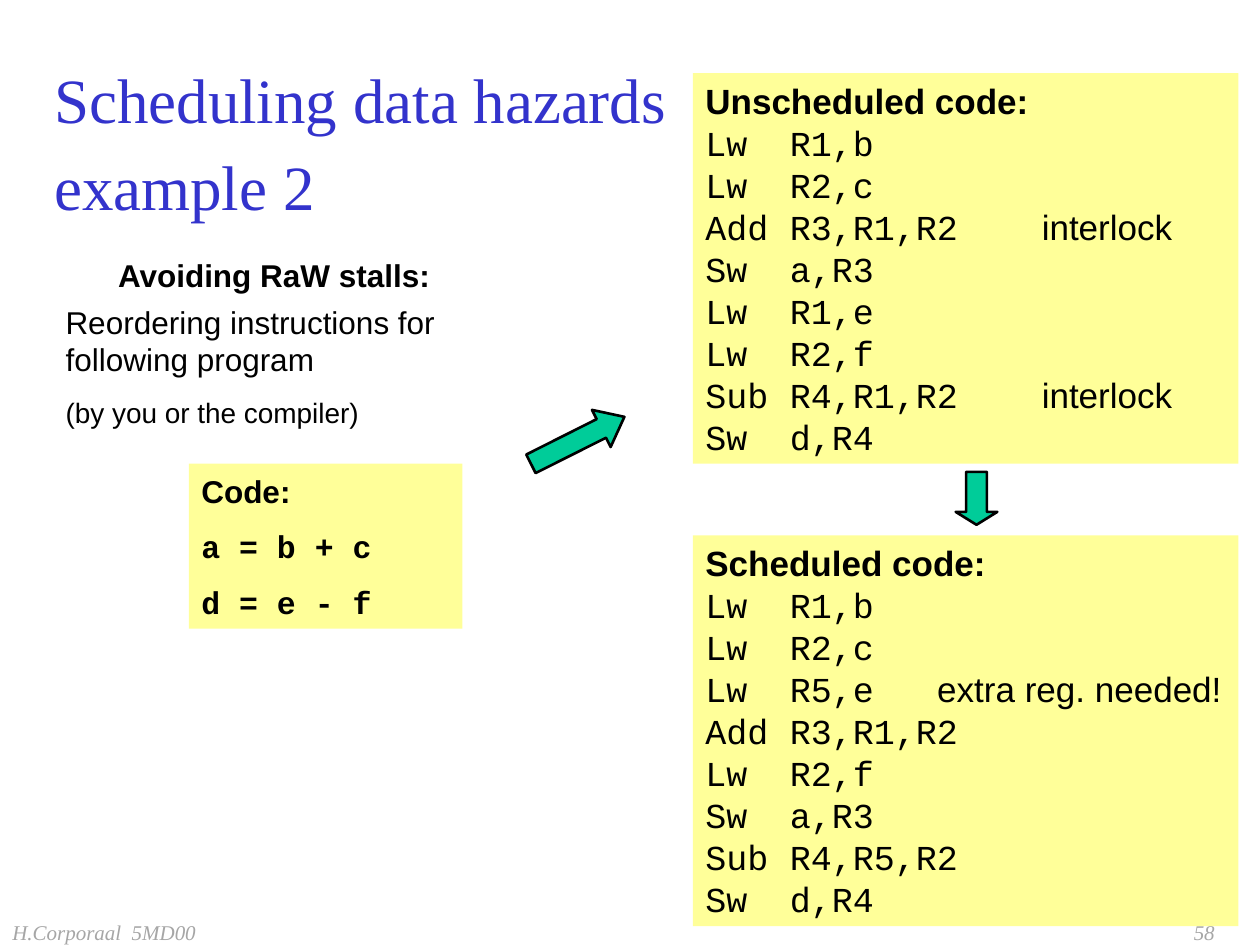
from dataclasses import dataclass

from lxml.etree import SubElement
from pptx import Presentation
from pptx.dml.color import RGBColor
from pptx.enum.shapes import MSO_SHAPE
from pptx.enum.text import MSO_ANCHOR, MSO_AUTO_SIZE, PP_ALIGN
from pptx.oxml.ns import qn
from pptx.util import Inches, Pt

BLACK = RGBColor(0x00, 0x00, 0x00)
BLUE = RGBColor(0x33, 0x33, 0xCC)
GRAY = RGBColor(0xA6, 0xA6, 0xA6)
YELLOW = RGBColor(0xFF, 0xFF, 0x99)
GREEN = RGBColor(0x00, 0xCC, 0x99)
SANS, MONO, SERIF = "Arial", "Courier New", "Times New Roman"
OPERAND_TAB = 0.67
PARA_GAP = 10


@dataclass
class Area:
    left: float
    top: float
    width: float
    height: float

    def lengths(self) -> list:
        return [Inches(v) for v in (self.left, self.top, self.width, self.height)]


@dataclass
class Style:
    size: float
    font: str = SANS
    color: RGBColor = BLACK
    bold: bool = False
    italic: bool = False


@dataclass
class Listing:
    heading: str
    area: Area
    comment_tab: float
    lines: list[tuple[str, ...]]  # opcode, operands and an optional comment


@dataclass
class Arrow:
    area: Area
    rotation: float
    head_length: float


def add_span(para, text: str, style: Style) -> None:
    span = para.add_run()
    span.text = text
    font = span.font
    font.name, font.size = style.font, Pt(style.size)
    font.bold, font.italic = style.bold, style.italic
    font.color.rgb = style.color


def prepare_frame(box, wrap: bool = True):
    frame = box.text_frame
    frame.word_wrap = wrap
    frame.auto_size = MSO_AUTO_SIZE.NONE
    frame.vertical_anchor = MSO_ANCHOR.MIDDLE
    return frame


def place(box, area: Area) -> None:
    box.left, box.top, box.width, box.height = area.lengths()


def write_paras(frame, paras: list[tuple[str, Style]],
                align=PP_ALIGN.LEFT, gap: float = 0) -> None:
    for index, (text, style) in enumerate(paras):
        para = frame.paragraphs[0] if index == 0 else frame.add_paragraph()
        para.alignment, para.space_before = align, Pt(gap)
        add_span(para, text, style)


def add_text(page, area: Area, text: str, style: Style,
             align=PP_ALIGN.LEFT, wrap: bool = True) -> None:
    box = page.shapes.add_textbox(*area.lengths())
    write_paras(prepare_frame(box, wrap), [(text, style)], align)


def add_panel(page, area: Area):
    """Add a yellow rectangle and return its text frame."""
    box = page.shapes.add_shape(MSO_SHAPE.RECTANGLE, *area.lengths())
    box.shadow.inherit = False
    box.fill.solid()
    box.fill.fore_color.rgb = YELLOW
    box.line.fill.background()
    return prepare_frame(box)


def set_tabs(para, stops: list[float]) -> None:
    tabs = SubElement(para._p.get_or_add_pPr(), qn("a:tabLst"))
    for stop in stops:
        SubElement(tabs, qn("a:tab"), pos=str(Inches(stop)), algn="l")


def add_listing(page, listing: Listing) -> None:
    frame = add_panel(page, listing.area)
    write_paras(frame, [(listing.heading, Style(20, bold=True))])
    for opcode, operands, *comment in listing.lines:
        para = frame.add_paragraph()
        para.alignment = PP_ALIGN.LEFT
        set_tabs(para, [OPERAND_TAB, listing.comment_tab])
        add_span(para, f"{opcode}\t{operands}", Style(20, MONO))
        for note in comment:
            add_span(para, f"\t{note}", Style(20))


def add_arrow(page, arrow: Arrow) -> None:
    shape = page.shapes.add_shape(MSO_SHAPE.RIGHT_ARROW, *arrow.area.lengths())
    shape.shadow.inherit = False
    shape.rotation = arrow.rotation
    shape.adjustments[0] = 0.5
    shape.adjustments[1] = arrow.head_length
    shape.fill.solid()
    shape.fill.fore_color.rgb = GREEN
    shape.line.color.rgb = BLACK
    shape.line.width = Pt(1.5)


def fill_title(title) -> None:
    place(title, Area(0.33, 0.58, 5.08, 1))
    para = prepare_frame(title).paragraphs[0]
    para.alignment, para.line_spacing = PP_ALIGN.LEFT, 1.15
    style = Style(36, SERIF, BLUE)
    add_span(para, "Scheduling data hazards", style)
    para.add_line_break()
    add_span(para, "example 2", style)


def fill_body(body) -> None:
    place(body, Area(0.42, 2.33, 3.5, 1.15))
    frame = prepare_frame(body)
    write_paras(frame, [
        ("Reordering instructions for following program", Style(18)),
        ("(by you or the compiler)", Style(16)),
    ], gap=PARA_GAP)
    for para in frame.paragraphs:
        properties = para._p.get_or_add_pPr()
        properties.set("marL", "0")
        properties.set("indent", "0")
        SubElement(properties, qn("a:buNone"))


LISTINGS = [
    Listing("Unscheduled code:", Area(5.5, 0.58, 4.33, 3.1), 2.67, [
        ("Lw", "R1,b"), ("Lw", "R2,c"), ("Add", "R3,R1,R2", "interlock"),
        ("Sw", "a,R3"), ("Lw", "R1,e"), ("Lw", "R2,f"),
        ("Sub", "R4,R1,R2", "interlock"), ("Sw", "d,R4"),
    ]),
    Listing("Scheduled code:", Area(5.5, 4.25, 4.33, 3.1), 1.84, [
        ("Lw", "R1,b"), ("Lw", "R2,c"), ("Lw", "R5,e", "extra reg. needed!"),
        ("Add", "R3,R1,R2"), ("Lw", "R2,f"), ("Sw", "a,R3"),
        ("Sub", "R4,R5,R2"), ("Sw", "d,R4"),
    ]),
]
ARROWS = [
    Arrow(Area(4.17, 3.33, 0.83, 0.33), 333.3, 0.62),
    Arrow(Area(7.54, 3.79, 0.42, 0.33), 90, 0.31),
]


def main() -> None:
    deck = Presentation()
    deck.slide_width, deck.slide_height = Inches(10), Inches(7.5)
    page = deck.slides.add_slide(deck.slide_layouts[1])

    footer = Style(12, SERIF, GRAY, italic=True)
    add_text(page, Area(0, 7.3, 2.33, 0.2), "H.Corporaal  5MD00", footer)
    add_text(page, Area(7.41, 7.3, 2.33, 0.2), "58", footer, PP_ALIGN.RIGHT)

    fill_title(page.shapes.title)
    add_text(page, Area(0.42, 1.93, 3.51, 0.5), "Avoiding RaW stalls:",
             Style(18, bold=True), PP_ALIGN.CENTER, wrap=False)
    fill_body(page.placeholders[1])

    code = Style(18, MONO, bold=True)
    write_paras(add_panel(page, Area(1.5, 3.68, 2.17, 1.31)), [
        ("Code:", Style(18, bold=True)),
        ("a = b + c", code),
        ("d = e - f", code),
    ], gap=PARA_GAP)

    for listing, arrow in zip(LISTINGS, ARROWS):
        add_listing(page, listing)
        add_arrow(page, arrow)
    deck.save("out.pptx")


if __name__ == "__main__":
    main()
